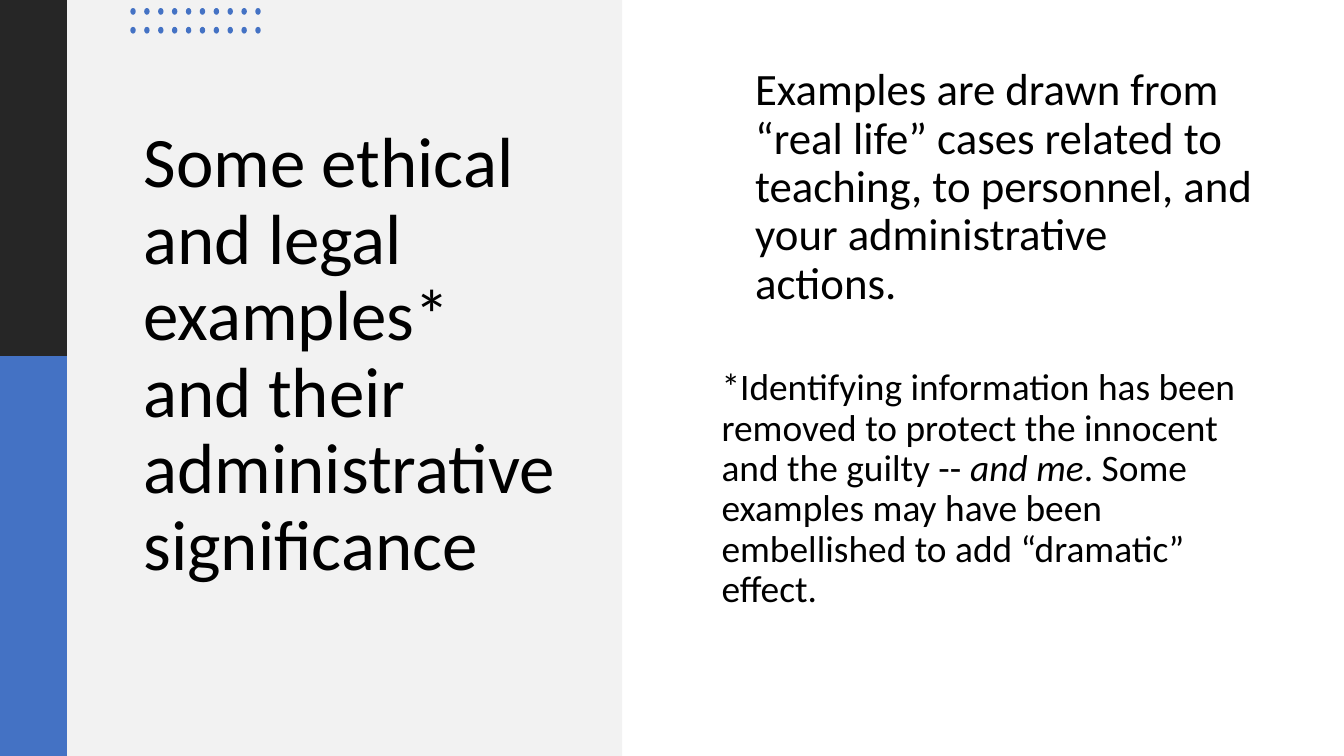
from pptx import Presentation
from pptx.dml.color import RGBColor
from pptx.enum.shapes import MSO_SHAPE
from pptx.enum.text import MSO_ANCHOR
from pptx.util import Inches, Pt

RECTANGLE = MSO_SHAPE.RECTANGLE
OVAL = MSO_SHAPE.OVAL
MIDDLE = MSO_ANCHOR.MIDDLE

BLACK = RGBColor(0x00, 0x00, 0x00)
CHARCOAL = RGBColor(0x26, 0x26, 0x26)
BLUE = RGBColor(0x44, 0x72, 0xC4)
PALE_GREY = RGBColor(0xF2, 0xF2, 0xF2)

PAGE_WIDTH = 10
PAGE_HEIGHT = PAGE_WIDTH * 9 / 16
BAND_WIDTH, BAND_SPLIT = 0.5, 2.65
DOT_COLUMNS, DOT_ROWS = 10, 2
DOT_LEFT, DOT_RIGHT = 0.97, 1.9
DOT_TOP, DOT_ROW_STEP = 0.06, 0.14


def write_paragraph(para, *spans, size, font="Calibri", color=BLACK,
                    line_spacing=0.9, space_after=0, indent=0):
    """Fill a paragraph; each span is a (text, italic) pair, with \\n as a line break."""
    para.line_spacing = line_spacing
    para.space_after = Pt(space_after)
    if indent:
        properties = para._p.get_or_add_pPr()
        properties.set("marL", str(Inches(indent)))
        properties.set("indent", "0")
    for text, italic in spans:
        for number, line in enumerate(text.split("\n")):
            if number:
                para.add_line_break()
            span = para.add_run()
            span.text = line
            span.font.name = font
            span.font.size = Pt(size)
            span.font.italic = italic
            span.font.color.rgb = color


class SlideBuilder:
    def __init__(self, page):
        self.page = page

    def shape(self, kind, left, top, width, height, fill, parent=None):
        shapes = (parent or self.page).shapes
        shape = shapes.add_shape(kind, Inches(left), Inches(top),
                                 Inches(width), Inches(height))
        shape.shadow.inherit = False
        shape.fill.solid()
        shape.fill.fore_color.rgb = fill
        shape.line.fill.background()

    def dot_grid(self):
        group = self.page.shapes.add_group_shape()
        column_step = (DOT_RIGHT - DOT_LEFT) / (DOT_COLUMNS - 1)
        for column in range(DOT_COLUMNS):
            for row in range(DOT_ROWS):
                self.shape(OVAL, DOT_LEFT + column * column_step,
                           DOT_TOP + row * DOT_ROW_STEP, 0.04, 0.05, BLUE, group)

    def text(self, left, top, width, height, paragraphs):
        """Add a vertically centred box; paragraphs are (spans, format) pairs."""
        box = self.page.shapes.add_textbox(Inches(left), Inches(top),
                                           Inches(width), Inches(height))
        frame = box.text_frame
        frame.word_wrap = True
        frame.vertical_anchor = MIDDLE
        for number, (spans, style) in enumerate(paragraphs):
            para = frame.add_paragraph() if number else frame.paragraphs[0]
            write_paragraph(para, *spans, **style)


def main():
    deck = Presentation()
    deck.slide_width = Inches(PAGE_WIDTH)
    deck.slide_height = Inches(PAGE_HEIGHT)
    builder = SlideBuilder(deck.slides.add_slide(deck.slide_layouts[6]))

    builder.shape(RECTANGLE, 0, 0, BAND_WIDTH, BAND_SPLIT, CHARCOAL)
    builder.shape(RECTANGLE, 0, BAND_SPLIT, BAND_WIDTH, PAGE_HEIGHT - BAND_SPLIT, BLUE)
    builder.shape(RECTANGLE, BAND_WIDTH, 0, 4.13, PAGE_HEIGHT, PALE_GREY)

    title = "Some ethical and legal examples*\nand their administrative significance"
    builder.text(0.97, 0.55, 3.4, 4.2, [([(title, False)], {"size": 38})])
    builder.dot_grid()

    examples = [("Examples are drawn from “real life” cases related to teaching, "
                 "to personnel, and your administrative actions.", False)]
    disclaimer = [
        ("*Identifying information has been removed to protect the innocent "
         "and the guilty -- ", False),
        ("and me", True),
        (". Some examples may have been embellished to add “dramatic” effect.", False),
    ]
    builder.text(5.27, 0.41, 4.18, 4.22, [
        (examples, {"size": 24, "indent": 0.25, "space_after": 32}),
        (disclaimer, {"size": 20}),
    ])

    deck.save("out.pptx")


if __name__ == "__main__":
    main()
